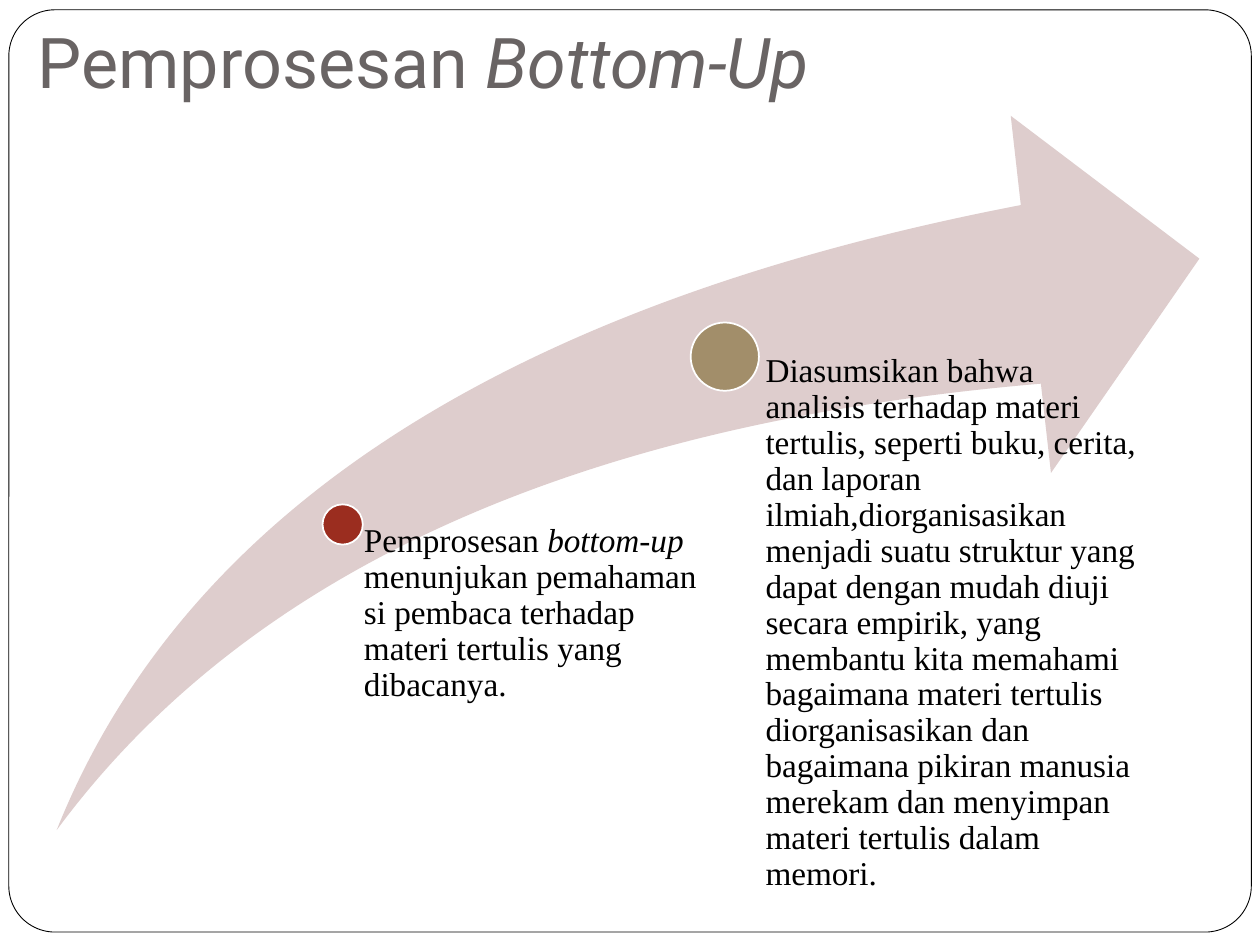
from pptx import Presentation
from pptx.dml.color import RGBColor
from pptx.enum.shapes import MSO_SHAPE
from pptx.enum.text import MSO_ANCHOR, MSO_AUTO_SIZE, PP_ALIGN
from pptx.util import Pt

WHITE = RGBColor(0xFF, 0xFF, 0xFF)
BLACK = RGBColor(0x00, 0x00, 0x00)
GREY = RGBColor(0x69, 0x64, 0x64)
PINK = RGBColor(0xDE, 0xCD, 0xCD)
RED = RGBColor(0x9B, 0x2D, 0x1F)
TAN = RGBColor(0xA2, 0x8E, 0x6A)


def add_filled_shape(kind, box, fill, line=None, width=0):
    shape = slide.shapes.add_shape(kind, *[Pt(length) for length in box])
    shape.shadow.inherit = False
    shape.fill.solid()
    shape.fill.fore_color.rgb = fill
    if line is None:
        shape.line.fill.background()
    else:
        shape.line.color.rgb = line
        shape.line.width = Pt(width)
    return shape


def write_runs(paragraph, runs, font_name, size, color):
    for text, italic in runs:
        run = paragraph.add_run()
        run.text = text
        run.font.name = font_name
        run.font.size = Pt(size)
        run.font.italic = italic
        run.font.color.rgb = color


presentation = Presentation()
presentation.slide_width = Pt(720)
presentation.slide_height = Pt(540)
slide = presentation.slides.add_slide(presentation.slide_layouts[5])

frame = add_filled_shape(MSO_SHAPE.ROUNDED_RECTANGLE, (5.04, 5.6, 710, 527), WHITE, BLACK, 0.5)
frame.adjustments[0] = 0.05

title = slide.shapes.title
slide.shapes._spTree.append(title._element)
title.left, title.top, title.width, title.height = Pt(14.4), Pt(21.6), Pt(481.7), Pt(44)
text_frame = title.text_frame
text_frame.auto_size = MSO_AUTO_SIZE.NONE
text_frame.vertical_anchor = MSO_ANCHOR.BOTTOM
text_frame.margin_left = text_frame.margin_right = text_frame.margin_bottom = Pt(7.2)
text_frame.margin_top = Pt(3.6)
text_frame.paragraphs[0].alignment = PP_ALIGN.LEFT
write_runs(text_frame.paragraphs[0], [("Pemprosesan ", False), ("Bottom-Up", True)], "Roboto", 40, GREY)

arrow = add_filled_shape(MSO_SHAPE.SWOOSH_ARROW, (32.4, 66.2, 653, 408.2), PINK)
arrow.adjustments[0] = 0.25
arrow.adjustments[1] = 0.25

steps = [
    (
        (184.3, 288.2, 23), RED, (195.8, 299.5, 212.4, 174.2), 12.2,
        [
            ("Pemprosesan ", False),
            ("bottom-up ", True),
            ("menunjukan pemahaman si pembaca terhadap materi tertulis yang dibacanya.", False),
        ],
    ),
    (
        (394.7, 184.3, 39), TAN, (416.9, 202.3, 234.7, 270), 20.6,
        [
            (
                "Diasumsikan bahwa analisis terhadap materi tertulis, seperti buku, cerita, "
                "dan laporan ilmiah,diorganisasikan menjadi suatu struktur yang dapat dengan "
                "mudah diuji secara empirik, yang membantu kita memahami bagaimana materi "
                "tertulis diorganisasikan dan bagaimana pikiran manusia merekam dan menyimpan "
                "materi tertulis dalam memori.",
                False,
            ),
        ],
    ),
]

for (left, top, diameter), color, text_box, indent, runs in steps:
    add_filled_shape(MSO_SHAPE.OVAL, (left, top, diameter, diameter), color, WHITE, 1)
    description = slide.shapes.add_textbox(*[Pt(length) for length in text_box])
    text_frame = description.text_frame
    text_frame.word_wrap = True
    text_frame.margin_left = Pt(indent)
    text_frame.margin_top = text_frame.margin_right = text_frame.margin_bottom = 0
    paragraph = text_frame.paragraphs[0]
    paragraph.line_spacing = 0.9
    write_runs(paragraph, runs, "Times New Roman", 19, BLACK)

presentation.save("out.pptx")
